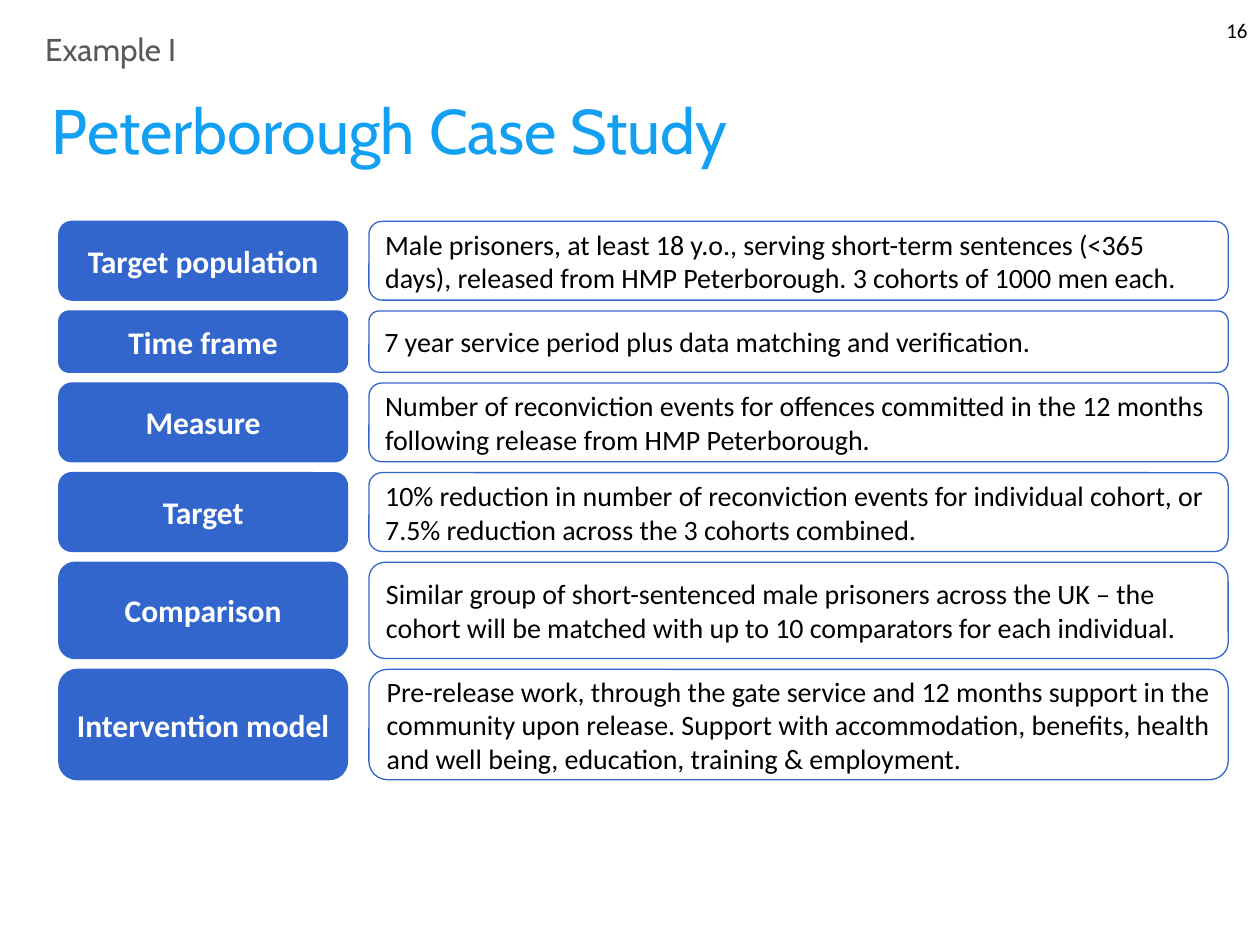
"""Build the Peterborough case study slide."""
from pptx import Presentation
from pptx.dml.color import RGBColor
from pptx.enum import shapes, text
from pptx.util import Pt

SKY = RGBColor(0x13, 0xA0, 0xF2)
BLUE = RGBColor(0x33, 0x66, 0xCC)
GREY = RGBColor(0x59, 0x59, 0x59)
WHITE = RGBColor(0xFF, 0xFF, 0xFF)
BLACK = RGBColor(0, 0, 0)

LEFT, CENTER, RIGHT = text.PP_ALIGN.LEFT, text.PP_ALIGN.CENTER, text.PP_ALIGN.RIGHT
MIDDLE, TOP = text.MSO_ANCHOR.MIDDLE, text.MSO_ANCHOR.TOP

FIRST_ROW_TOP, ROW_GAP = 126.5, 6.2
ROWS = [
    (45, "Target population",
     "Male prisoners, at least 18 y.o., serving short-term sentences (<365 days), "
     "released from HMP Peterborough. 3 cohorts of 1000 men each."),
    (35, "Time frame",
     "7 year service period plus data matching and verification."),
    (45, "Measure",
     "Number of reconviction events for offences committed in the 12 months "
     "following release from HMP Peterborough."),
    (45, "Target",
     "10% reduction in number of reconviction events for individual cohort, "
     "or 7.5% reduction across the 3 cohorts combined."),
    (55, "Comparison",
     "Similar group of short-sentenced male prisoners across the UK – the cohort "
     "will be matched with up to 10 comparators for each individual."),
    (63, "Intervention model",
     "Pre-release work, through the gate service and 12 months support in the "
     "community upon release. Support with accommodation, benefits, health and "
     "well being, education, training & employment."),
]


def write(frame, words, *, size, color=BLACK, font="Calibri", bold=False,
          align=LEFT, anchor=MIDDLE, wrap=True, fit=text.MSO_AUTO_SIZE.NONE):
    """Put one formatted paragraph into a text frame."""
    frame.word_wrap = wrap
    frame.auto_size = fit
    frame.vertical_anchor = anchor
    paragraph = frame.paragraphs[0]
    paragraph.alignment = align
    run = paragraph.add_run()
    run.text = words
    run.font.name = font
    run.font.size = Pt(size)
    run.font.bold = bold
    run.font.color.rgb = color


class CaseSlide:
    """Holds the slide and its shared style."""

    heading_font = "Cabin"
    accent = BLUE
    line_width = 0.75

    def __init__(self, deck):
        """Add a title-only slide to the deck."""
        self.slide = deck.slides.add_slide(deck.slide_layouts[5])

    def title(self, words, left, top, width, height):
        """Fill and place the title placeholder."""
        heading = self.slide.shapes.title
        heading.left, heading.top = Pt(left), Pt(top)
        heading.width, heading.height = Pt(width), Pt(height)
        write(heading.text_frame, words, size=36, color=SKY, font=self.heading_font)

    def label(self, words, left, top, width, height, **style):
        """Add a free text label."""
        box = self.slide.shapes.add_textbox(Pt(left), Pt(top), Pt(width), Pt(height))
        write(box.text_frame, words, **style)

    def card(self, words, left, top, width, height, filled=False, **style):
        """Add a rounded card, solid or outlined."""
        card = self.slide.shapes.add_shape(
            shapes.MSO_SHAPE.ROUNDED_RECTANGLE, Pt(left), Pt(top), Pt(width), Pt(height))
        card.shadow.inherit = False
        if filled:
            card.fill.solid()
            card.fill.fore_color.rgb = self.accent
        else:
            card.fill.background()
        card.line.color.rgb = self.accent
        card.line.width = Pt(self.line_width)
        write(card.text_frame, words, **style)


def main():
    """Compose and save the slide."""
    deck = Presentation()
    deck.slide_width, deck.slide_height = Pt(720), Pt(540)
    case = CaseSlide(deck)
    case.title("Peterborough Case Study", 22.5, 47.5, 671, 52.5)

    top = FIRST_ROW_TOP
    for height, topic, detail in ROWS:
        case.card(topic, 33.6, top, 165, height, filled=True,
                  size=18, color=WHITE, bold=True, align=CENTER)
        case.card(detail, 210.8, top, 491, height, size=16)
        top += height + ROW_GAP

    case.label("Example I", 18.7, 13.7, 95, 29, size=18, color=GREY,
               font=case.heading_font, anchor=TOP, wrap=False,
               fit=text.MSO_AUTO_SIZE.SHAPE_TO_FIT_TEXT)
    case.label("16", 688.3, 2.9, 31.7, 28.8, size=12, align=RIGHT)
    deck.save("out.pptx")


if __name__ == "__main__":
    main()
